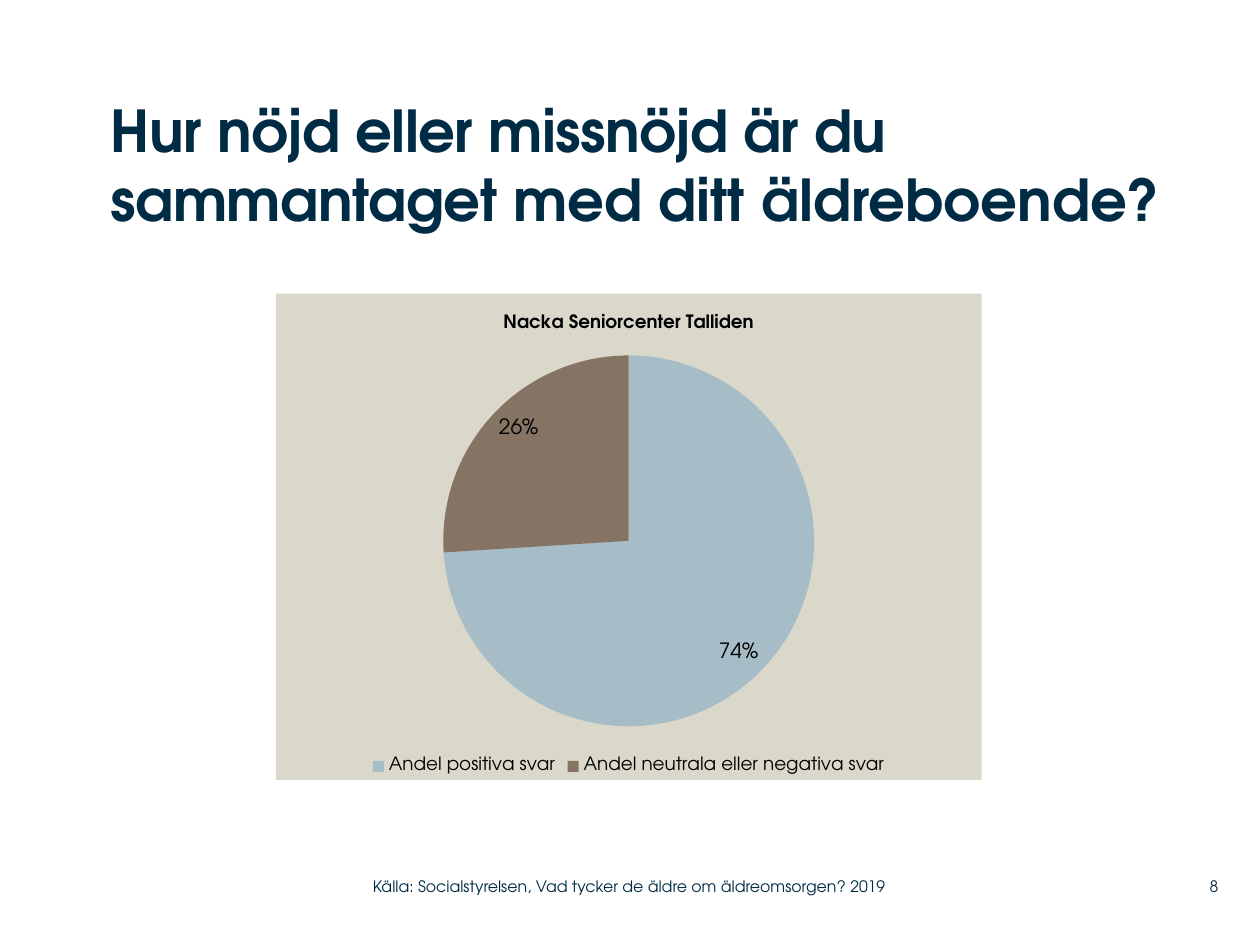
from dataclasses import dataclass

from lxml import etree
from pptx import Presentation
from pptx.chart.data import CategoryChartData
from pptx.dml.color import RGBColor
from pptx.enum.chart import XL_CHART_TYPE, XL_LABEL_POSITION, XL_LEGEND_POSITION
from pptx.enum.text import MSO_ANCHOR, MSO_AUTO_SIZE, PP_ALIGN
from pptx.oxml.ns import qn
from pptx.util import Inches, Pt

NAVY = RGBColor(0x00, 0x2B, 0x45)
BLACK = RGBColor(0x00, 0x00, 0x00)
SAND = RGBColor(0xDA, 0xD7, 0xCB)
BLUE_GREY = RGBColor(0xA6, 0xBC, 0xC6)
BROWN = RGBColor(0x85, 0x73, 0x63)
FONT = "TeX Gyre Adventor"

LEFT, RIGHT = PP_ALIGN.LEFT, PP_ALIGN.RIGHT
TOP, MIDDLE = MSO_ANCHOR.TOP, MSO_ANCHOR.MIDDLE
PIE = XL_CHART_TYPE.PIE
BOTTOM_LEGEND = XL_LEGEND_POSITION.BOTTOM
INSIDE_END = XL_LABEL_POSITION.INSIDE_END


@dataclass
class FooterItem:
    text: str
    left: float
    width: float
    align: PP_ALIGN


@dataclass
class Answer:
    label: str
    percent: int
    color: RGBColor


FOOTER = [
    FooterItem("8", 9.2, 0.47, RIGHT),
    FooterItem("Källa: Socialstyrelsen, Vad tycker de äldre om äldreomsorgen? 2019",
               2.96, 4.43, LEFT),
]
ANSWERS = [
    Answer("Andel positiva svar", 74, BLUE_GREY),
    Answer("Andel neutrala eller negativa svar", 26, BROWN),
]


def style_font(font, size: float, color: RGBColor, bold: bool = False) -> None:
    font.name = FONT
    font.size = Pt(size)
    font.bold = bold
    font.color.rgb = color


def prepare_frame(frame, anchor: MSO_ANCHOR) -> None:
    frame.margin_left = frame.margin_right = 0
    frame.margin_top = frame.margin_bottom = 0
    frame.word_wrap = True
    frame.auto_size = MSO_AUTO_SIZE.NONE
    frame.vertical_anchor = anchor


def add_title(slide) -> None:
    title = slide.shapes.title
    title.left, title.top = Inches(0.88), Inches(0.75)
    title.width, title.height = Inches(8.83), Inches(1.42)
    prepare_frame(title.text_frame, TOP)
    question = title.text_frame.paragraphs[0]
    question.alignment = LEFT
    for text, spacing in (("Hur nöjd eller missnöjd är du sammantaget ", "-30"),
                          ("med ditt äldreboende?", "0")):
        run = question.add_run()
        run.text = text
        style_font(run.font, 33, NAVY, bold=True)
        run.font._element.set("spc", spacing)


def add_footer_item(slide, item: FooterItem) -> None:
    box = slide.shapes.add_textbox(Inches(item.left), Inches(6.89),
                                   Inches(item.width), Inches(0.29))
    prepare_frame(box.text_frame, MIDDLE)
    paragraph = box.text_frame.paragraphs[0]
    paragraph.alignment = item.align
    run = paragraph.add_run()
    run.text = item.text
    style_font(run.font, 9, NAVY)


def fill_chart_background(chart, color: RGBColor) -> None:
    properties = etree.Element(qn("c:spPr"))
    fill = etree.SubElement(properties, qn("a:solidFill"))
    etree.SubElement(fill, qn("a:srgbClr"), val=str(color))
    line = etree.SubElement(properties, qn("a:ln"))
    etree.SubElement(line, qn("a:noFill"))
    chart._chartSpace.find(qn("c:chart")).addnext(properties)


def add_answer_chart(slide, answers: list[Answer]) -> None:
    data = CategoryChartData(number_format="0")
    data.categories = [answer.label for answer in answers]
    data.add_series("Series 1", [answer.percent for answer in answers])
    chart = slide.shapes.add_chart(PIE, Inches(2.19), Inches(2.33),
                                   Inches(5.6), Inches(3.86), data).chart
    style_font(chart.font, 18, BLACK)
    fill_chart_background(chart, SAND)

    # Heading and legend
    chart.has_title = True
    heading = chart.chart_title.text_frame.paragraphs[0].add_run()
    heading.text = "Nacka Seniorcenter Talliden"
    style_font(heading.font, 10.5, BLACK, bold=True)
    chart.chart_title.include_in_layout = False
    chart.has_legend = True
    chart.legend.position = BOTTOM_LEGEND
    chart.legend.include_in_layout = False
    style_font(chart.legend.font, 10.5, BLACK)

    # Slices and their percentages
    plot = chart.plots[0]
    plot.vary_by_categories = True
    shares = plot.series[0]
    for index, answer in enumerate(answers):
        slice_format = shares.points[index].format
        slice_format.fill.solid()
        slice_format.fill.fore_color.rgb = answer.color
        slice_format.line.fill.background()
    labels = shares.data_labels
    labels.show_percentage = True
    labels.show_value = False
    labels.number_format = "0%"
    labels.number_format_is_linked = False
    labels.position = INSIDE_END
    style_font(labels.font, 12, BLACK)


def main() -> None:
    presentation = Presentation()
    presentation.slide_width, presentation.slide_height = Inches(10), Inches(7.5)
    slide = presentation.slides.add_slide(presentation.slide_layouts[5])
    for item in FOOTER:
        add_footer_item(slide, item)
    add_title(slide)
    add_answer_chart(slide, ANSWERS)
    presentation.save("out.pptx")


if __name__ == "__main__":
    main()
